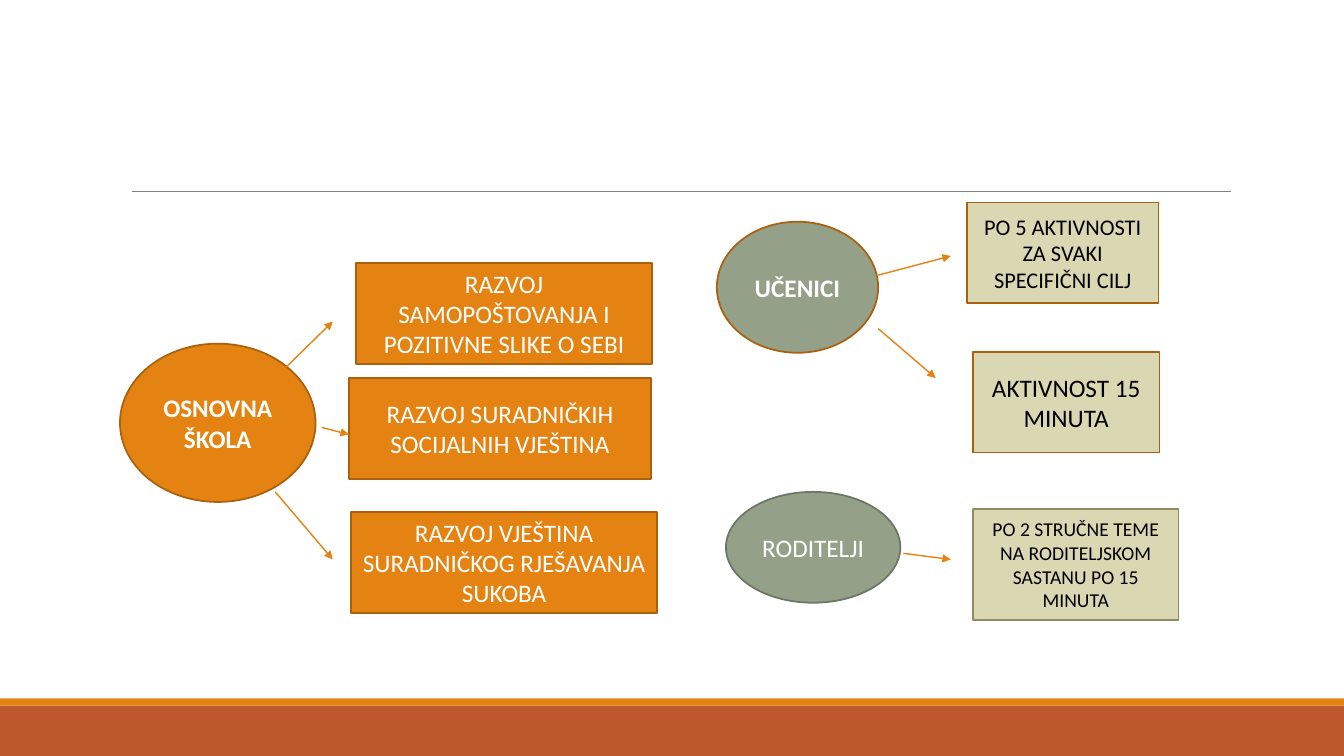
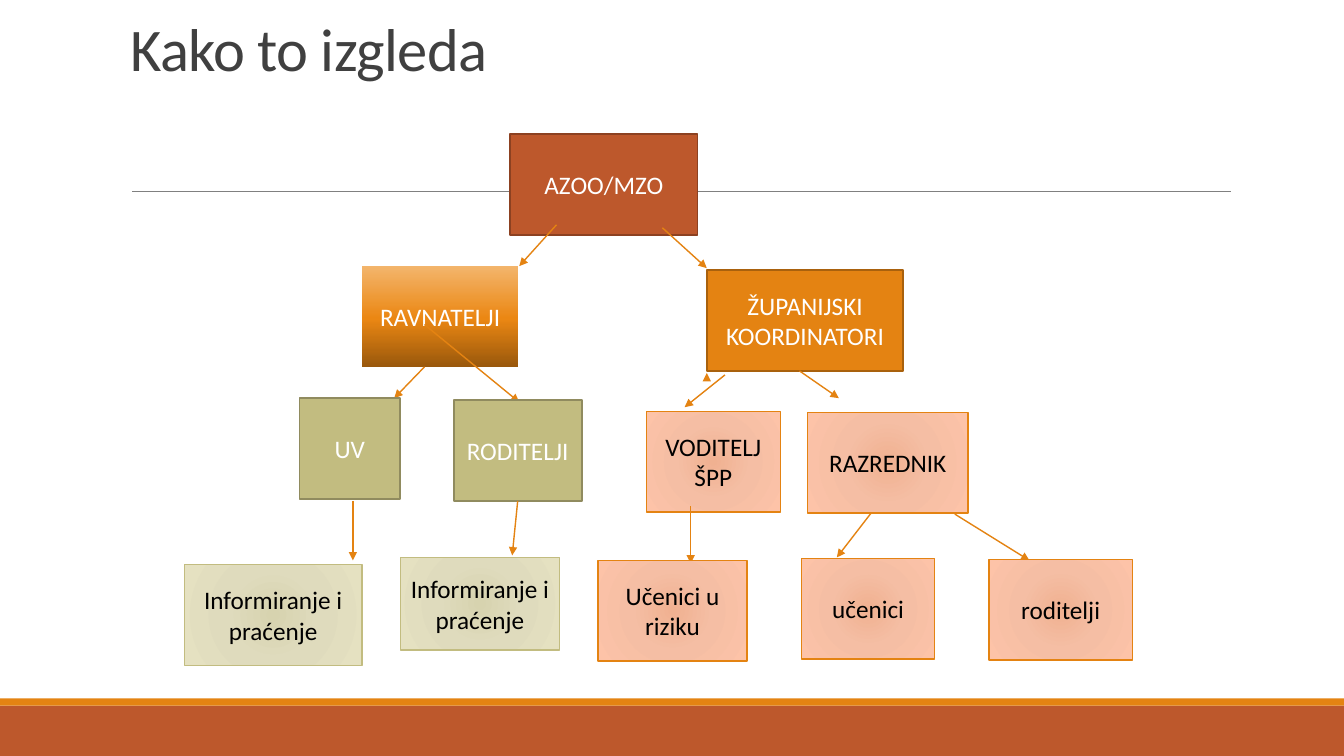
from dataclasses import dataclass

from lxml.etree import SubElement
from pptx import Presentation
from pptx.dml.color import RGBColor
from pptx.enum.shapes import MSO_CONNECTOR, MSO_SHAPE
from pptx.enum.text import MSO_ANCHOR, PP_ALIGN
from pptx.oxml import parse_xml
from pptx.oxml.ns import nsdecls, qn
from pptx.util import Inches, Pt

FONT = "Calibri"
WHITE = RGBColor(0xFF, 0xFF, 0xFF)
BLACK = RGBColor(0x00, 0x00, 0x00)
CHARCOAL = RGBColor(0x40, 0x40, 0x40)
GRAY = RGBColor(0x80, 0x80, 0x80)
RUST = RGBColor(0xBD, 0x58, 0x2C)
DARK_RUST = RGBColor(0x8C, 0x41, 0x21)
ORANGE = RGBColor(0xE4, 0x83, 0x12)
DARK_ORANGE = RGBColor(0xA9, 0x61, 0x0D)
SAGE = RGBColor(0x94, 0xA0, 0x88)
DARK_SAGE = RGBColor(0x6D, 0x76, 0x65)
OLIVE = RGBColor(0xC2, 0xBC, 0x80)
DARK_OLIVE = RGBColor(0x90, 0x8B, 0x5F)
SAND = RGBColor(0xDA, 0xD7, 0xB3)


def color_stops(*pairs):
    return [(position, RGBColor.from_string(color)) for position, color in pairs]


# Gradients: direction and (percent, colour) stops
RISING = '<a:lin ang="16200000" scaled="0"/>'
RADIAL = ('<a:path path="circle">'
          '<a:fillToRect l="50000" t="50000" r="50000" b="50000"/></a:path>')
AMBER_FADE = (RISING, color_stops((0, "99580C"), (48, "EB8713"), (100, "F3B56C")))
PEACH_GLOW = (RADIAL, color_stops((0, "F0B191"), (45, "F5BEA4"), (100, "FDC3A8")))
SAND_GLOW = (RADIAL, color_stops((0, "D7D3AF"), (45, "DFDBBD"), (100, "E5E1C1")))


@dataclass
class Style:
    fill: object
    line: object
    text: RGBColor = WHITE
    width: float = 1.25
    size: int = 18
    bold: bool = False
    form: object = MSO_SHAPE.RECTANGLE


SCHOOL = Style(ORANGE, DARK_ORANGE, bold=True, form=MSO_SHAPE.OVAL)
PUPILS = Style(SAGE, DARK_ORANGE, bold=True, form=MSO_SHAPE.OVAL)
PARENTS = Style(SAGE, DARK_SAGE, form=MSO_SHAPE.OVAL)
GOAL = Style(ORANGE, DARK_ORANGE)
ACTIVITY = Style(SAND, DARK_ORANGE, BLACK)
ACTIVITY_SMALL = Style(SAND, DARK_ORANGE, BLACK, size=16)
MEETING = Style(SAND, DARK_OLIVE, BLACK, size=14)
AGENCY = Style(RUST, DARK_RUST)
HEADS = Style(AMBER_FADE, None)
GROUP = Style(OLIVE, DARK_OLIVE)
PEACH = Style(PEACH_GLOW, ORANGE, BLACK, width=1)
INFORMED = Style(SAND_GLOW, OLIVE, BLACK, width=1)

# Each level: nodes (text, style, left, top, width, height),
# then arrows (from x, from y, to x, to y) lying over them
PROGRAMME = [
    ([
        ("OSNOVNA ŠKOLA", SCHOOL, 1.19, 3.41, 1.94, 1.57),
        ("RAZVOJ SAMOPOŠTOVANJA I POZITIVNE SLIKE O SEBI", GOAL, 3.53, 2.61, 2.94, 1),
        ("RAZVOJ SURADNIČKIH SOCIJALNIH VJEŠTINA", GOAL, 3.46, 3.75, 3, 1),
        ("RAZVOJ VJEŠTINA SURADNIČKOG RJEŠAVANJA SUKOBA", GOAL, 3.48, 5.08, 3.04, 1),
    ], [
        (2.84, 3.64, 3.3, 3.19),
        (3.19, 4.24, 3.46, 4.31),
        (2.73, 4.88, 3.3, 5.55),
    ]),
    ([
        ("UČENICI", PUPILS, 7.11, 2.2, 1.6, 1.3),
        ("PO 5 AKTIVNOSTI ZA SVAKI SPECIFIČNI CILJ", ACTIVITY_SMALL, 9.59, 2.01, 1.9, 1),
        ("AKTIVNOST 15 MINUTA", ACTIVITY, 9.65, 3.49, 1.85, 1),
        ("RODITELJI", PARENTS, 7.2, 4.88, 1.73, 1.1),
        ("PO 2 STRUČNE TEME NA RODITELJSKOM SASTANU PO 15 MINUTA",
         MEETING, 9.65, 5.05, 2.04, 1.1),
    ], [
        (8.71, 2.73, 9.43, 2.54),
        (8.71, 3.26, 9.28, 3.75),
        (8.96, 5.49, 9.43, 5.55),
    ]),
]

ORGANISATION = [
    ([
        ("AZOO/MZO", AGENCY, 5.06, 1.33, 1.86, 1),
    ], [
        (5.52, 2.23, 5.15, 2.64),
        (6.57, 2.26, 7.01, 2.66),
    ]),
    ([
        ("RAVNATELJI", HEADS, 3.59, 2.64, 1.55, 1),
        ("ŽUPANIJSKI KOORDINATORI", GOAL, 7.01, 2.68, 1.95, 1),
    ], [
        (4.21, 3.22, 5.15, 3.99),
        (4.21, 3.64, 3.91, 3.95),
        (7.93, 3.68, 8.32, 3.95),
        (7.01, 3.75, 7.01, 3.7),
        (7.19, 3.72, 6.79, 4.04),
    ]),
    ([
        ("UV", GROUP, 2.97, 3.95, 1, 1),
        ("RODITELJI", GROUP, 4.5, 3.97, 1.27, 1),
        ("VODITELJ ŠPP", PEACH, 6.41, 4.08, 1.33, 1),
        ("RAZREDNIK", PEACH, 8.01, 4.09, 1.59, 1),
    ], [
        (3.5, 4.97, 3.5, 5.56),
        (5.13, 4.97, 5.08, 5.51),
        (6.85, 5.02, 6.85, 5.59),
        (8.64, 5.09, 8.3, 5.53),
        (9.47, 5.1, 10.21, 5.56),
    ]),
    ([
        ("Informiranje i praćenje", INFORMED, 1.83, 5.6, 1.76, 1),
        ("Informiranje i praćenje", INFORMED, 3.97, 5.53, 1.58, 0.92),
        ("Učenici u riziku", PEACH, 5.93, 5.56, 1.48, 1),
        ("učenici", PEACH, 7.95, 5.54, 1.32, 1),
        ("roditelji", PEACH, 9.81, 5.55, 1.42, 1),
    ], []),
]

SLIDES = [(None, PROGRAMME), ("Kako to izgleda", ORGANISATION)]


def paint(shape, fill):
    if isinstance(fill, RGBColor):
        shape.fill.solid()
        shape.fill.fore_color.rgb = fill
        return
    direction, stops = fill
    stop_list = "".join(
        f'<a:gs pos="{position * 1000}"><a:srgbClr val="{color}"/></a:gs>'
        for position, color in stops)
    shape.fill.background()
    properties = shape._element.spPr
    properties.replace(properties.find(qn("a:noFill")), parse_xml(
        f'<a:gradFill {nsdecls("a")} rotWithShape="1">'
        f'<a:gsLst>{stop_list}</a:gsLst>{direction}</a:gradFill>'))


def add_block(slide, form, place, fill, line=None, width=1):
    block = slide.shapes.add_shape(form, *map(Inches, place))
    block.shadow.inherit = False
    paint(block, fill)
    if line is None:
        block.line.fill.background()
    else:
        block.line.color.rgb = line
        block.line.width = Pt(width)
    return block


def add_line(slide, ends, color, width):
    line = slide.shapes.add_connector(MSO_CONNECTOR.STRAIGHT, *map(Inches, ends))
    line.line.color.rgb = color
    line.line.width = Pt(width)
    SubElement(line._element.spPr, qn("a:effectLst"))
    return line


def add_node(slide, text, style, *place):
    node = add_block(slide, style.form, place, style.fill, style.line, style.width)
    frame = node.text_frame
    frame.word_wrap = True
    frame.vertical_anchor = MSO_ANCHOR.MIDDLE
    label = frame.paragraphs[0]
    label.text = text
    label.alignment = PP_ALIGN.CENTER
    label.font.name = FONT
    label.font.size = Pt(style.size)
    label.font.bold = style.bold
    label.font.color.rgb = style.text
    return node


def side_at(nodes, x, y):
    """Find the node and side whose middle lies at a point."""
    for node in nodes:
        if node.auto_shape_type != MSO_SHAPE.RECTANGLE:
            continue
        left, top, width, height = node.left, node.top, node.width, node.height
        middles = [(left + width / 2, top), (left, top + height / 2),
                   (left + width / 2, top + height), (left + width, top + height / 2)]
        for side, (middle_x, middle_y) in enumerate(middles):
            if max(abs(middle_x - Inches(x)), abs(middle_y - Inches(y))) < Inches(0.02):
                return node, side
    return None


def add_arrow(slide, nodes, ends):
    arrow = add_line(slide, ends, ORANGE, 1)
    SubElement(arrow.line._get_or_add_ln(), qn("a:tailEnd"), type="triangle")
    for connect, point in ((arrow.begin_connect, ends[:2]), (arrow.end_connect, ends[2:])):
        joint = side_at(nodes, *point)
        if joint:
            connect(*joint)


def add_title(slide, text):
    box = slide.shapes.add_textbox(Inches(1.2), Inches(0.31), Inches(11), Inches(0.57))
    frame = box.text_frame
    frame.word_wrap = True
    frame.vertical_anchor = MSO_ANCHOR.BOTTOM
    title = frame.paragraphs[0]
    title.line_spacing = 0.85
    run = title.add_run()
    run.text = text
    run.font._element.set("spc", "-50")
    title.font.name = FONT
    title.font.size = Pt(43.2)
    title.font.color.rgb = CHARCOAL


def add_base(deck):
    """Start a slide with the footer bands and the rule."""
    slide = deck.slides.add_slide(deck.slide_layouts[6])
    for top, height, color in ((7, 0.5, RUST), (6.93, 0.07, ORANGE)):
        add_block(slide, MSO_SHAPE.RECTANGLE, (0, top, 13.33, height), color)
    add_line(slide, (1.31, 1.9, 12.21, 1.9), GRAY, 0.5)
    return slide


def main():
    deck = Presentation()
    deck.slide_width, deck.slide_height = Inches(13.33), Inches(7.5)
    for title, levels in SLIDES:
        slide = add_base(deck)
        if title:
            add_title(slide, title)
        for nodes, arrows in levels:
            placed = [add_node(slide, *node) for node in nodes]
            for ends in arrows:
                add_arrow(slide, placed, ends)
    deck.save("out.pptx")


if __name__ == "__main__":
    main()
